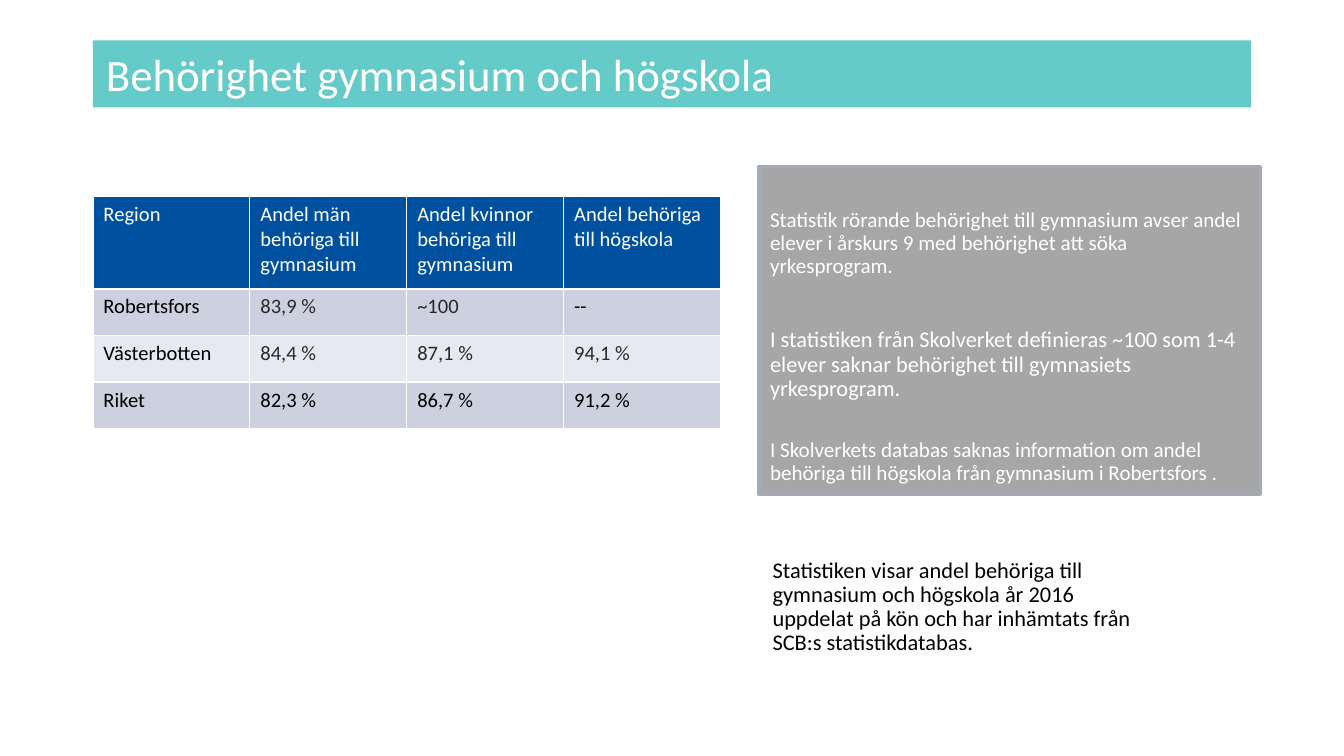
import dataclasses
import typing

import pptx
import pptx.dml.color
import pptx.enum.shapes
import pptx.enum.text
import pptx.util

Inches = pptx.util.Inches
Pt = pptx.util.Pt


@dataclasses.dataclass(frozen=True)
class Theme:
    font: str = "Calibri"
    white: str = "FFFFFF"
    black: str = "000000"
    charcoal: str = "292929"
    teal: str = "64CBC9"
    blue: str = "0050A0"
    band_dark: str = "CCD0DF"
    band_light: str = "E7E9F0"
    gray: str = "A6A6A6"
    gray_edge: str = "A3ABB6"
    title_size: float = 24
    body_size: float = 12
    note_size: float = 11.25
    table_size: float = 11


THEME = Theme()


class Area(typing.NamedTuple):
    left: float
    top: float
    width: float
    height: float

    def lengths(self) -> list:
        return [Inches(value) for value in self]


class Note(typing.NamedTuple):
    text: str
    size: float
    space_before: float


class Row(typing.NamedTuple):
    fill: str
    texts: tuple
    colors: tuple


NOTES = (
    Note("Statistik rörande behörighet till gymnasium avser andel elever i årskurs 9 "
         "med behörighet att söka yrkesprogram.", THEME.note_size, 0),
    Note("I statistiken från Skolverket definieras ~100 som 1-4 elever saknar "
         "behörighet till gymnasiets yrkesprogram.", THEME.body_size, 27.3),
    Note("I Skolverkets databas saknas information om andel behöriga till högskola "
         "från gymnasium i Robertsfors .", THEME.note_size, 20.7),
)

HEADER_HEIGHT = 0.69

ROWS = (
    Row(THEME.blue,
        ("Region", "Andel män behöriga till gymnasium",
         "Andel kvinnor behöriga till gymnasium", "Andel behöriga till högskola"),
        (THEME.white,) * 4),
    Row(THEME.band_dark, ("Robertsfors", "83,9 %", "~100", "--"),
        (THEME.black, THEME.charcoal, THEME.charcoal, THEME.black)),
    Row(THEME.band_light, ("Västerbotten", "84,4 %", "87,1 %", "94,1 %"),
        (THEME.black,) + (THEME.charcoal,) * 3),
    Row(THEME.band_dark, ("Riket", "82,3 %", "86,7 %", "91,2 %"),
        (THEME.black,) * 4),
)


def rgb(color: str) -> pptx.dml.color.RGBColor:
    return pptx.dml.color.RGBColor.from_string(color)


def write(para, text: str, *, size: float, color: str,
          line_spacing: float = 1.0, space_before: float = 0) -> None:
    para.alignment = pptx.enum.text.PP_ALIGN.LEFT
    para.line_spacing = line_spacing
    para.space_before = Pt(space_before)
    span = para.add_run()
    span.text = text
    span.font.name = THEME.font
    span.font.size = Pt(size)
    span.font.bold = False
    span.font.color.rgb = rgb(color)


def set_margins(target, horizontal: float, top: float, bottom: float) -> None:
    target.margin_left = target.margin_right = Inches(horizontal)
    target.margin_top = Inches(top)
    target.margin_bottom = Inches(bottom)


def add_panel(page, area: Area, fill: str, edge: typing.Optional[str] = None):
    box = page.shapes.add_shape(pptx.enum.shapes.MSO_SHAPE.RECTANGLE, *area.lengths())
    box.shadow.inherit = False
    box.fill.solid()
    box.fill.fore_color.rgb = rgb(fill)
    if edge:
        box.line.color.rgb = rgb(edge)
        box.line.width = Pt(2)
    else:
        box.line.fill.background()
    box.text_frame.word_wrap = True
    return box


def add_title(page) -> None:
    box = add_panel(page, Area(0.69, 0.3, 8.62, 0.5), THEME.teal)
    box.text_frame.vertical_anchor = pptx.enum.text.MSO_ANCHOR.MIDDLE
    write(box.text_frame.paragraphs[0], "Behörighet gymnasium och högskola",
          size=THEME.title_size, color=THEME.white)


def add_eligibility_table(page, area: Area, rows: typing.Sequence[Row]) -> None:
    column_count = len(rows[0].texts)
    table = page.shapes.add_table(len(rows), column_count, *area.lengths()).table
    for column in table.columns:
        column.width = Inches(area.width / column_count)
    body_height = (area.height - HEADER_HEIGHT) / (len(rows) - 1)
    for row_index, row in enumerate(rows):
        table.rows[row_index].height = Inches(body_height if row_index else HEADER_HEIGHT)
        for column_index, (text, color) in enumerate(zip(row.texts, row.colors)):
            cell = table.cell(row_index, column_index)
            set_margins(cell, 0.08, 0.04, 0.04)
            cell.fill.solid()
            cell.fill.fore_color.rgb = rgb(row.fill)
            write(cell.text_frame.paragraphs[0], text,
                  size=THEME.table_size, color=color)


def add_source_text(page) -> None:
    box = page.shapes.add_textbox(*Area(5.65, 4.11, 2.97, 0.96).lengths())
    box.text_frame.word_wrap = True
    write(box.text_frame.paragraphs[0],
          "Statistiken visar andel behöriga till gymnasium och högskola år 2016 "
          "uppdelat på kön och har inhämtats från SCB:s statistikdatabas.",
          size=THEME.body_size, color=THEME.black, line_spacing=0.9)


def add_notes_panel(page, notes: typing.Sequence[Note]) -> None:
    box = add_panel(page, Area(5.65, 1.24, 3.73, 2.44), THEME.gray, THEME.gray_edge)
    frame = box.text_frame
    frame.vertical_anchor = pptx.enum.text.MSO_ANCHOR.TOP
    set_margins(frame, 0.08, 0.32, 0.04)
    for index, note in enumerate(notes):
        para = frame.add_paragraph() if index else frame.paragraphs[0]
        write(para, note.text, size=note.size, color=THEME.white,
              line_spacing=0.9, space_before=note.space_before)


def main() -> None:
    deck = pptx.Presentation()
    deck.slide_width = Inches(10)
    deck.slide_height = Inches(10 * 9 / 16)
    page = deck.slides.add_slide(deck.slide_layouts[6])
    add_title(page)
    add_eligibility_table(page, Area(0.69, 1.46, 4.67, 1.73), ROWS)
    add_source_text(page)
    add_notes_panel(page, NOTES)
    deck.save("out.pptx")


if __name__ == "__main__":
    main()
